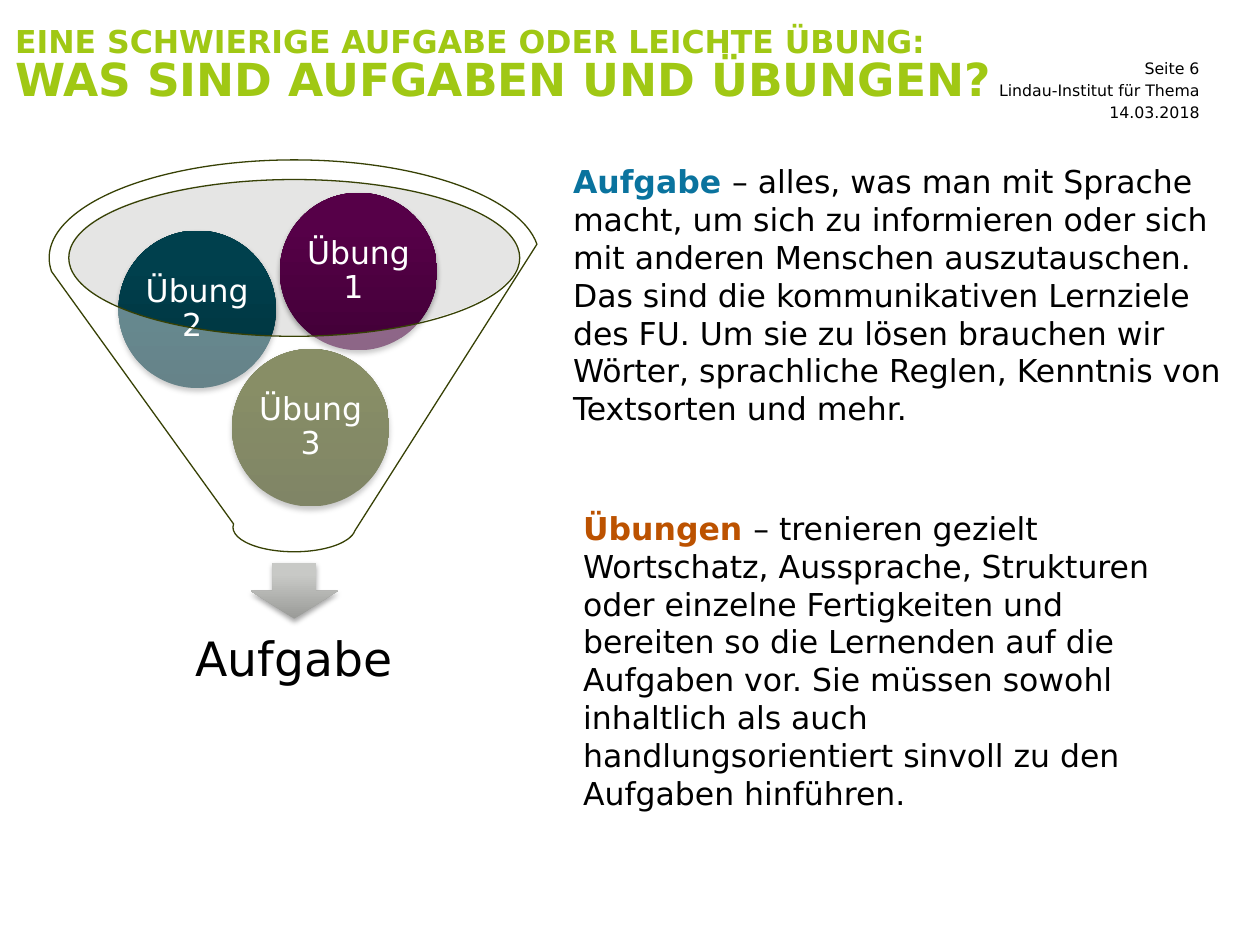
from lxml import etree
from pptx import Presentation
from pptx.dml.color import RGBColor
from pptx.enum.shapes import MSO_SHAPE
from pptx.enum.text import MSO_ANCHOR, MSO_AUTO_SIZE, PP_ALIGN
from pptx.oxml.ns import qn
from pptx.util import Inches, Pt

ELLIPSE, ARROW, FUNNEL = MSO_SHAPE.OVAL, MSO_SHAPE.DOWN_ARROW, MSO_SHAPE.FUNNEL
LEFT, CENTER, RIGHT = PP_ALIGN.LEFT, PP_ALIGN.CENTER, PP_ALIGN.RIGHT
TOP, MIDDLE = MSO_ANCHOR.TOP, MSO_ANCHOR.MIDDLE
GROW = MSO_AUTO_SIZE.SHAPE_TO_FIT_TEXT

FONT = "DejaVu Sans"
SLIDE_WIDTH, SLIDE_HEIGHT = Inches(10), Inches(7.5)
BLACK = RGBColor(0x00, 0x00, 0x00)
WHITE = RGBColor(0xFF, 0xFF, 0xFF)
LIME = RGBColor(0xA0, 0xC8, 0x14)
BLUE = RGBColor(0x0A, 0x73, 0x9E)
ORANGE = RGBColor(0xBC, 0x52, 0x00)
GREY = RGBColor(0xBF, 0xC0, 0xBD)
OUTLINE = RGBColor(0x37, 0x41, 0x05)
ARROW_SHADES = RGBColor(0x9A, 0x9B, 0x98), RGBColor(0xC8, 0xC9, 0xC6)
OLIVE_SHADES = RGBColor(0x2C, 0x34, 0x00), RGBColor(0x39, 0x44, 0x00)
TEAL_SHADES = RGBColor(0x00, 0x31, 0x3B), RGBColor(0x00, 0x40, 0x4D)
PURPLE_SHADES = RGBColor(0x42, 0x00, 0x37), RGBColor(0x56, 0x00, 0x48)

BALL_SIZE = (12.5, 16.67)
BALLS = [
    ("Übung 3", 18.4, 36.93, OLIVE_SHADES),
    ("Übung 2 ", 9.4, 24.4, TEAL_SHADES),
    ("Übung 1 ", 22.2, 20.4, PURPLE_SHADES),
]
PAGE_DETAILS = ["Seite 6", "Lindau-Institut für Thema", "14.03.2018"]
DEFINITIONS = [
    ((44.5, 16.53, 54.3, 29.6), "Aufgabe ", BLUE,
     "– alles, was man mit Sprache macht, um sich zu informieren oder sich "
     "mit anderen Menschen auszutauschen.",
     "Das sind die kommunikativen Lernziele des FU. Um sie zu lösen brauchen "
     "wir Wörter, sprachliche Reglen, Kenntnis von Textsorten und mehr."),
    ((45.3, 53.2, 50, 29.6), "Übungen ", ORANGE,
     "– trenieren gezielt Wortschatz, Aussprache, Strukturen oder einzelne "
     "Fertigkeiten und",
     "bereiten so die Lernenden auf die Aufgaben vor. Sie müssen sowohl "
     "inhaltlich als auch handlungsorientiert sinvoll zu den Aufgaben hinführen."),
]


def percent_box(left, top, width, height):
    return (int(SLIDE_WIDTH * left / 100), int(SLIDE_HEIGHT * top / 100),
            int(SLIDE_WIDTH * width / 100), int(SLIDE_HEIGHT * height / 100))


def write_text(shape, paragraphs, size=18, color=BLACK, align=LEFT,
               anchor=TOP, spacing=None, margins=(0, 0)):
    frame = shape.text_frame
    frame.word_wrap = True
    frame.vertical_anchor = anchor
    frame.margin_left = frame.margin_right = Inches(margins[0])
    frame.margin_top = frame.margin_bottom = Inches(margins[1])
    for index, runs in enumerate(paragraphs):
        paragraph = frame.add_paragraph() if index else frame.paragraphs[0]
        paragraph.alignment = align
        paragraph.line_spacing = spacing
        for position, (text, changes) in enumerate(runs):
            if changes.get("new_line") and position:
                paragraph.add_line_break()
            run = paragraph.add_run()
            run.text = text
            run.font.name = FONT
            run.font.size = Pt(changes.get("size", size))
            run.font.bold = changes.get("bold", False)
            run.font.color.rgb = changes.get("color", color)


def add_text(slide, box, paragraphs, **text_format):
    shape = slide.shapes.add_textbox(*percent_box(*box))
    write_text(shape, paragraphs, **text_format)
    return shape


def add_glass(slide, kind, box, color, line=None):
    shape = slide.shapes.add_shape(kind, *percent_box(*box))
    shape.fill.solid()
    shape.fill.fore_color.rgb = color
    color_element = shape.fill._xPr.find(qn("a:solidFill"))[0]
    etree.SubElement(color_element, qn("a:alpha"), val="40000")
    if line is None:
        shape.line.fill.background()
    else:
        shape.line.color.rgb = line
        shape.line.width = Pt(0.75)
    shape.shadow.inherit = False


def add_shaded(slide, kind, box, shades):
    shape = slide.shapes.add_shape(kind, *percent_box(*box))
    shape.fill.gradient()
    shape.fill.gradient_angle = 90
    for stop, position, color in zip(shape.fill.gradient_stops, (0, 0.8), shades):
        stop.position = position
        stop.color.rgb = color
    shape.line.fill.background()
    shape.shadow.inherit = False
    effects = shape._element.spPr.find(qn("a:effectLst"))
    shadow = etree.SubElement(effects, qn("a:outerShdw"), blurRad=str(Pt(3.1)),
                              dist=str(Pt(1.8)), dir="5400000", rotWithShape="0")
    shadow_color = etree.SubElement(shadow, qn("a:srgbClr"), val=str(BLACK))
    etree.SubElement(shadow_color, qn("a:alpha"), val="35000")
    return shape


def add_heading(slide):
    lines = [("EINE SCHWIERIGE AUFGABE ODER LEICHTE ÜBUNG:", {"bold": True}),
             ("WAS SIND AUFGABEN UND ÜBUNGEN?",
              {"bold": True, "size": 26, "new_line": True})]
    add_text(slide, (1.2, 2.93, 82.7, 17.6), [lines], color=LIME, spacing=0.85)
    for row, detail in enumerate(PAGE_DETAILS):
        add_text(slide, (73.2, 6.13 + 2.33 * row, 22, 2.13), [[(detail, {})]],
                 size=9, align=RIGHT, anchor=MIDDLE)


def add_funnel_diagram(slide):
    add_glass(slide, ELLIPSE, (5.4, 18.93, 35.8, 16.53), GREY)
    add_shaded(slide, ARROW, (19.9, 59.6, 6.9, 5.87), ARROW_SHADES)
    add_text(slide, (6.7, 64.4, 33.3, 11.07), [[("Aufgabe", {})]], size=27,
             align=CENTER, anchor=MIDDLE, spacing=0.9, margins=(0.21, 0.21))
    for label, left, top, shades in BALLS:
        ball = add_shaded(slide, ELLIPSE, (left, top, *BALL_SIZE), shades)
        write_text(ball, [[(label, {})]], color=WHITE, align=CENTER,
                   anchor=MIDDLE, spacing=0.9, margins=(0.02, 0.02))
    add_glass(slide, FUNNEL, (3.9, 16.93, 38.9, 41.47), WHITE, line=OUTLINE)


def add_definitions(slide):
    for box, term, color, meaning, details in DEFINITIONS:
        paragraphs = [[(term, {"color": color, "bold": True}), (meaning, {})],
                      [(details, {})]]
        shape = add_text(slide, box, paragraphs, margins=(0.1, 0.05))
        shape.text_frame.auto_size = GROW


def main():
    presentation = Presentation()
    presentation.slide_width, presentation.slide_height = SLIDE_WIDTH, SLIDE_HEIGHT
    slide = presentation.slides.add_slide(presentation.slide_layouts[6])
    add_heading(slide)
    add_funnel_diagram(slide)
    add_definitions(slide)
    presentation.save("out.pptx")


if __name__ == "__main__":
    main()
